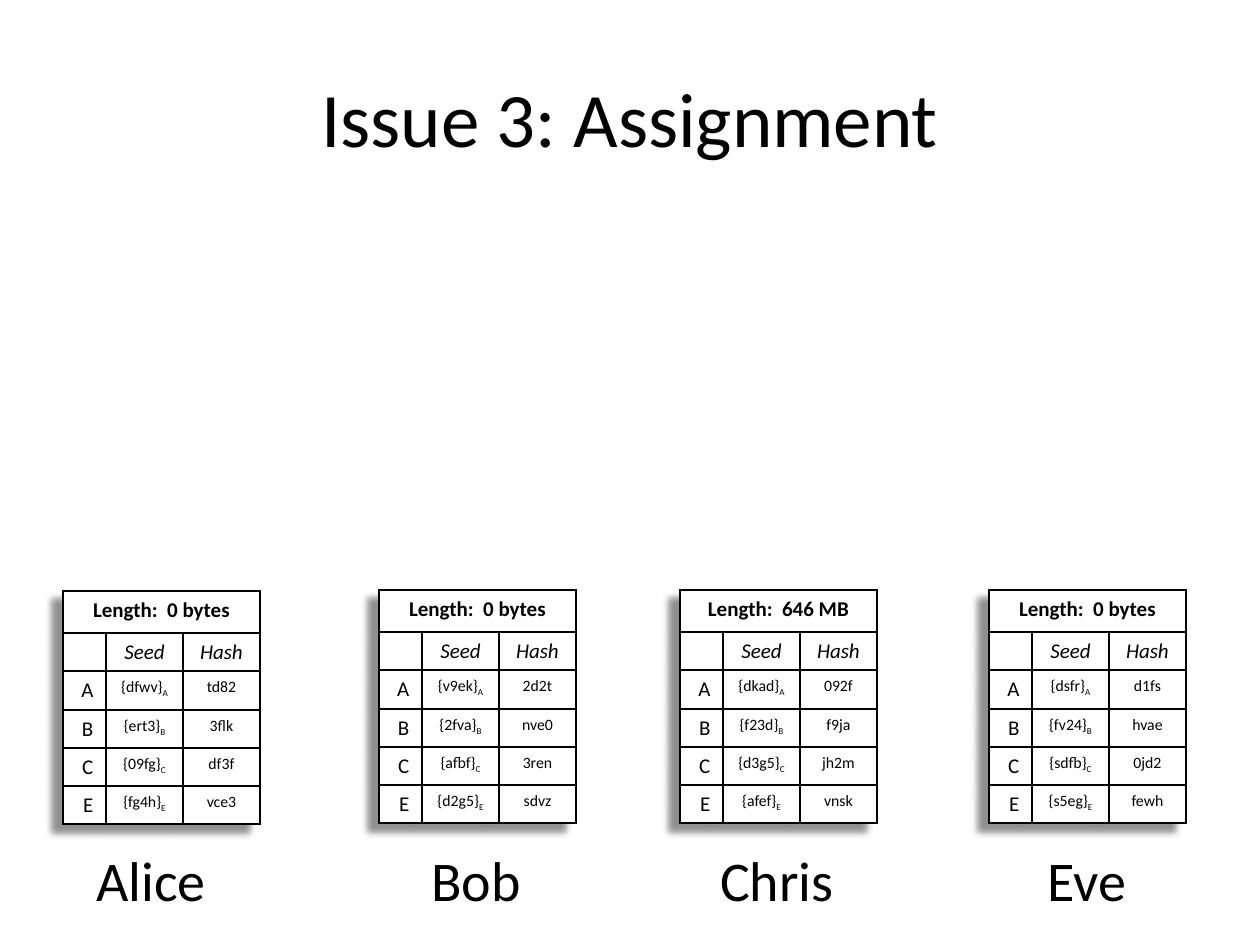
from dataclasses import dataclass

from lxml.etree import SubElement
from pptx import Presentation
from pptx.dml.color import RGBColor
from pptx.enum.text import MSO_ANCHOR, MSO_AUTO_SIZE, PP_ALIGN
from pptx.oxml import parse_xml
from pptx.oxml.ns import qn
from pptx.util import Pt

PX_PER_INCH = 126
NS = 'xmlns:a="http://schemas.openxmlformats.org/drawingml/2006/main"'


@dataclass(frozen=True)
class Theme:
    font: str = "Calibri"
    ink: str = "000000"
    paper: str = "FFFFFF"
    title: int = 44
    name: int = 32
    head: int = 12
    code: int = 9
    border: int = 1


THEME = Theme()
COLS = (43, 77, 77)
ROWS = (42, 38, 39, 38, 38, 38)
KEYS = "ABCE"

# name, table left, table top, name left, length, seeds, hashes
PEERS = [
    ("Alice", 63, 591, 63, "0 bytes", "dfwv ert3 09fg fg4h", "td82 3flk df3f vce3"),
    ("Bob", 379, 590, 388, "0 bytes", "v9ek 2fva afbf d2g5", "2d2t nve0 3ren sdvz"),
    ("Chris", 680, 590, 689, "646 MB", "dkad f23d d3g5 afef", "092f f9ja jh2m vnsk"),
    ("Eve", 989, 590, 999, "0 bytes", "dsfr fv24 sdfb s5eg", "d1fs hvae 0jd2 fewh"),
]


def px(n):
    return round(n * 914400 / PX_PER_INCH)


def put_text(tf, text, size, align=PP_ALIGN.CENTER, bold=False, italic=False, sub=""):
    """Fill the first paragraph; sub is set as a subscript after the text."""
    p = tf.paragraphs[0]
    p.alignment = align
    for part, baseline in ((text, 0), (sub, -25000)):
        if not part:
            continue
        r = p.add_run()
        r.text = part
        r.font.name = THEME.font
        r.font.size = Pt(size)
        r.font.bold, r.font.italic = bold, italic
        r.font.color.rgb = RGBColor.from_string(THEME.ink)
        if baseline:
            r.font._element.set("baseline", str(baseline))
    SubElement(p._p, qn("a:endParaRPr")).set("sz", str(size * 100))


def format_cell(cell):
    tcPr = cell._tc.get_or_add_tcPr()
    for side in ("lnL", "lnR", "lnT", "lnB"):
        tcPr.append(parse_xml(
            f'<a:{side} {NS} w="{Pt(THEME.border)}"><a:solidFill>'
            f'<a:srgbClr val="{THEME.ink}"/></a:solidFill></a:{side}>'))
    cell.fill.solid()
    cell.fill.fore_color.rgb = RGBColor.from_string(THEME.paper)


def add_table_shadow(table):
    table._tbl.tblPr.insert(0, parse_xml(
        f'<a:effectLst {NS}><a:outerShdw blurRad="{px(7)}" dist="{px(14)}" '
        f'dir="8640000" algn="tr" rotWithShape="0"><a:srgbClr val="{THEME.ink}">'
        f'<a:alpha val="43000"/></a:srgbClr></a:outerShdw></a:effectLst>'))


def add_title(s, text, x, y, w, h):
    sp = s.shapes.title
    sp.left, sp.top, sp.width, sp.height = map(px, (x, y, w, h))
    sp.text_frame.vertical_anchor = MSO_ANCHOR.MIDDLE
    put_text(sp.text_frame, text, THEME.title)


def add_name(s, text, x, y, w, h):
    tf = s.shapes.add_textbox(*map(px, (x, y, w, h))).text_frame
    tf.word_wrap = True
    tf.auto_size = MSO_AUTO_SIZE.SHAPE_TO_FIT_TEXT
    put_text(tf, text, THEME.name)


def add_peer_table(s, x, y, length, seeds, hashes):
    table = s.shapes.add_table(len(ROWS), len(COLS), px(x), px(y),
                               px(sum(COLS)), px(sum(ROWS))).table
    table.first_row = table.horz_banding = False
    add_table_shadow(table)
    for col, w in zip(table.columns, COLS):
        col.width = px(w)
    for row, h in zip(table.rows, ROWS):
        row.height = px(h)
    for cell in table.iter_cells():
        format_cell(cell)

    def put(row, col, text, size=THEME.head, **fmt):
        put_text(table.cell(row, col).text_frame, text, size, **fmt)

    table.cell(0, 0).merge(table.cell(0, 2))
    put(0, 0, f"Length:  {length}", bold=True)
    for col, head in enumerate(("", "Seed", "Hash")):
        put(1, col, head, italic=True)
    for row, (key, seed, digest) in enumerate(zip(KEYS, seeds, hashes), start=2):
        put(row, 0, key, align=PP_ALIGN.RIGHT)
        put(row, 1, f"{{{seed}}}", THEME.code, sub=key)
        put(row, 2, digest, THEME.code)


def main():
    prs = Presentation()
    prs.slide_width, prs.slide_height = px(1260), px(945)
    s = prs.slides.add_slide(prs.slide_layouts[5])
    add_title(s, "Issue 3: Assignment", 63, 38, 1134, 158)
    for name, x, y, name_x, length, seeds, hashes in PEERS:
        add_name(s, name, name_x, 839, 176, 81)
        add_peer_table(s, x, y, length, seeds.split(), hashes.split())
    prs.save("out.pptx")


if __name__ == "__main__":
    main()
